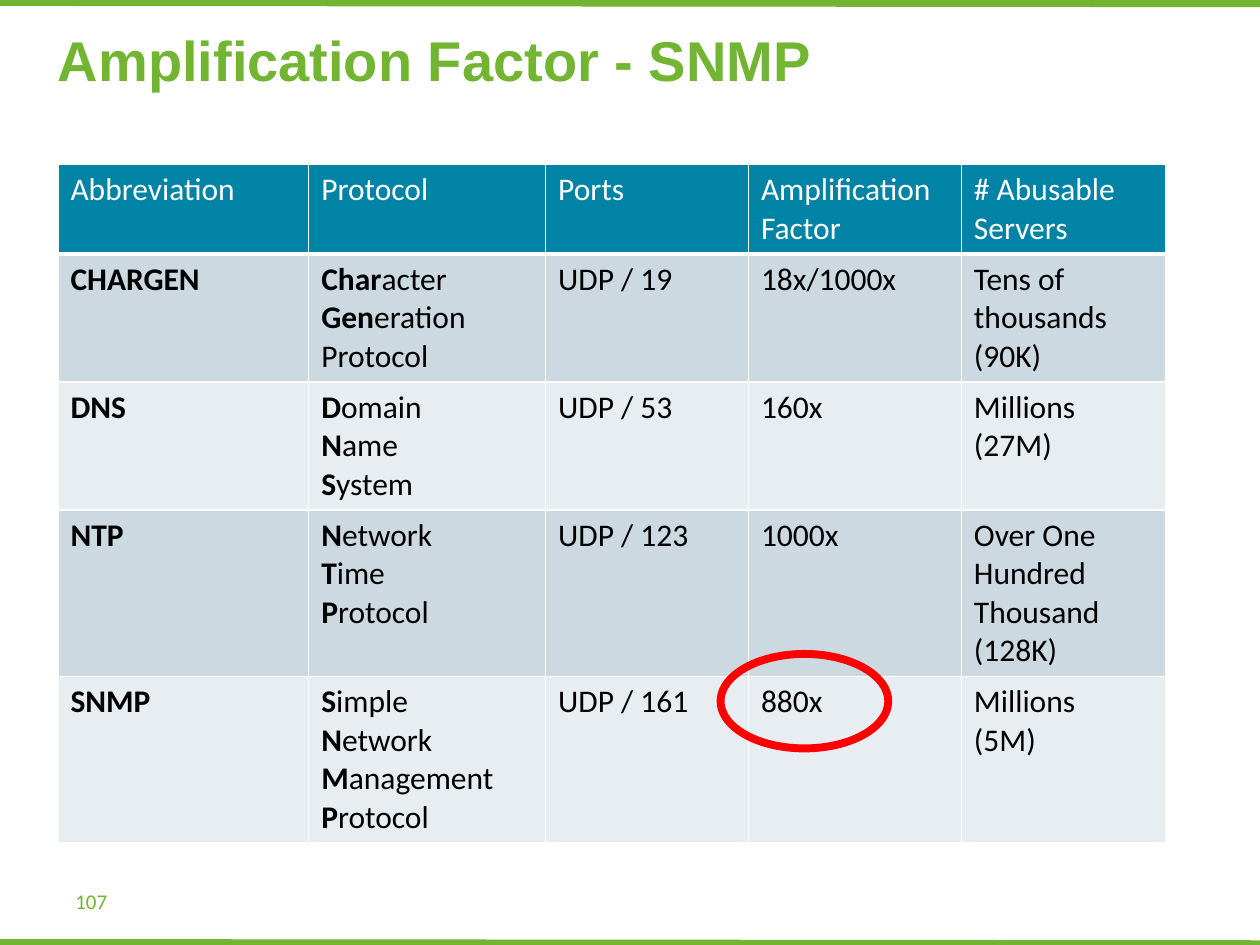
from dataclasses import dataclass

from lxml import etree
from pptx import Presentation
from pptx.dml.color import RGBColor
from pptx.enum.shapes import MSO_CONNECTOR, MSO_SHAPE
from pptx.enum.text import MSO_ANCHOR, PP_ALIGN
from pptx.oxml.ns import qn
from pptx.util import Pt

LINE = MSO_CONNECTOR.STRAIGHT
OVAL = MSO_SHAPE.OVAL
MIDDLE = MSO_ANCHOR.MIDDLE
LEFT = PP_ALIGN.LEFT

GREEN = RGBColor(0x71, 0xB5, 0x32)
TEAL = RGBColor(0x00, 0x83, 0xA5)
DARK = RGBColor(0xCC, 0xD9, 0xE1)
LIGHT = RGBColor(0xE7, 0xED, 0xF0)
WHITE = RGBColor(0xFF, 0xFF, 0xFF)
BLACK = RGBColor(0x00, 0x00, 0x00)
RED = RGBColor(0xFF, 0x00, 0x00)

WIDTHS = (143.3, 135.4, 115.9, 121.7, 116.6)
HEADS = ("Abbreviation", "Protocol", "Ports", "Amplification\nFactor", "# Abusable\nServers")


@dataclass
class Entry:
    abbr: str
    name: str
    port: int
    factor: str
    count: str
    height: float

    def texts(self) -> tuple:
        return f"{self.abbr}|", self.name, f"UDP / {self.port}", self.factor, self.count


ENTRIES = (
    Entry("CHARGEN", "Char|acter\nGen|eration\nProtocol", 19, "18x/1000x",
          "Tens of thousands\n(90K)", 73),
    Entry("DNS", "D|omain\nN|ame\nS|ystem", 53, "160x", "Millions (27M)", 73),
    Entry("NTP", "N|etwork\nT|ime\nP|rotocol", 123, "1000x",
          "Over One Hundred Thousand\n(128K)", 95),
    Entry("SNMP", "S|imple\nN|etwork\nM|anagement\nP|rotocol", 161, "880x",
          "Millions\n(5M)", 95),
)


def style(run, face: str, size: float, color: RGBColor, bold: bool = False) -> None:
    run.font.name = face
    run.font.size = Pt(size)
    run.font.bold = bold
    run.font.color.rgb = color


def draw_bar(slide, top: float) -> None:
    bar = slide.shapes.add_connector(LINE, Pt(0), Pt(top), Pt(721.4), Pt(top + 0.7))
    bar.line.color.rgb = GREEN
    bar.line.width = Pt(4)
    etree.SubElement(bar._element.spPr, qn("a:effectLst"))


def add_edges(cell, low: float) -> None:
    props = cell._tc.get_or_add_tcPr()
    sides = (("lnL", 1), ("lnR", 1), ("lnT", 1), ("lnB", low))
    for index, (side, width) in enumerate(sides):
        edge = etree.Element(qn(f"a:{side}"), w=str(Pt(width)))
        fill = etree.SubElement(edge, qn("a:solidFill"))
        etree.SubElement(fill, qn("a:srgbClr"), val=str(WHITE))
        props.insert(index, edge)


def fill_cell(cell, text: str, back: RGBColor, color: RGBColor, low: float) -> None:
    cell.fill.solid()
    cell.fill.fore_color.rgb = back
    add_edges(cell, low)
    lines = text.split("\n")
    cell.text_frame.text = "\n".join(line.split("|")[0] for line in lines)
    for para, line in zip(cell.text_frame.paragraphs, lines):
        style(para.runs[0], "Calibri", 18, color, "|" in line)
        rest = line.partition("|")[2]
        if rest:
            run = para.add_run()
            run.text = rest
            style(run, "Calibri", 18, color)


def draw_table(slide) -> None:
    frame = slide.shapes.add_table(len(ENTRIES) + 1, len(HEADS), Pt(33.1), Pt(94),
                                   Pt(sum(WIDTHS)), Pt(386))
    table = frame.table
    table.first_row = False
    table.horz_banding = False
    for col, width in zip(table.columns, WIDTHS):
        col.width = Pt(width)
    table.rows[0].height = Pt(50)
    for cell, text in zip(table.rows[0].cells, HEADS):
        fill_cell(cell, text, TEAL, WHITE, 3)
    for index, entry in enumerate(ENTRIES):
        row = table.rows[index + 1]
        row.height = Pt(entry.height)
        back = LIGHT if index % 2 else DARK
        for cell, text in zip(row.cells, entry.texts()):
            fill_cell(cell, text, back, BLACK, 1)


def draw_ring(slide) -> None:
    ring = slide.shapes.add_shape(OVAL, Pt(411.8), Pt(373.7), Pt(95.8), Pt(54))
    ring.shadow.inherit = False
    ring.fill.background()
    ring.line.color.rgb = RED
    ring.line.width = Pt(4.5)


def set_text(shape, text: str, face: str, size: float, bold: bool) -> None:
    frame = shape.text_frame
    frame.word_wrap = True
    frame.vertical_anchor = MIDDLE
    frame.text = text
    para = frame.paragraphs[0]
    para.alignment = LEFT
    style(para.runs[0], face, size, GREEN, bold)


def main() -> None:
    deck = Presentation()
    deck.slide_width, deck.slide_height = Pt(720), Pt(540)
    slide = deck.slides.add_slide(deck.slide_layouts[5])
    for top in (538.6, 1.4):
        draw_bar(slide, top)
    draw_table(slide)
    draw_ring(slide)
    title = slide.shapes.title
    title.left, title.top = Pt(25.9), Pt(10.8)
    title.width, title.height = Pt(668.2), Pt(46.1)
    set_text(title, "Amplification Factor - SNMP", "Arial", 32, True)
    number = slide.shapes.add_textbox(Pt(36), Pt(500.4), Pt(167.8), Pt(28.8))
    set_text(number, "107", "Calibri", 12, False)
    deck.save("out.pptx")


if __name__ == "__main__":
    main()
